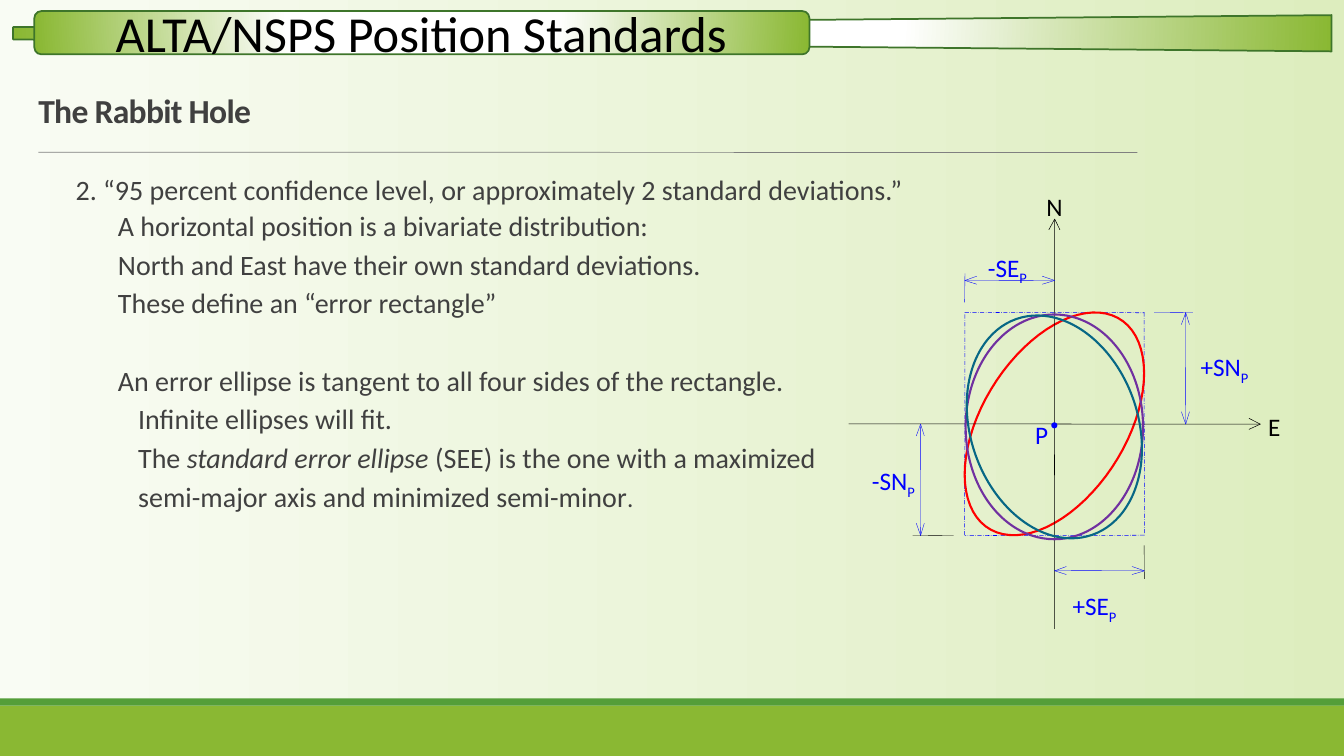
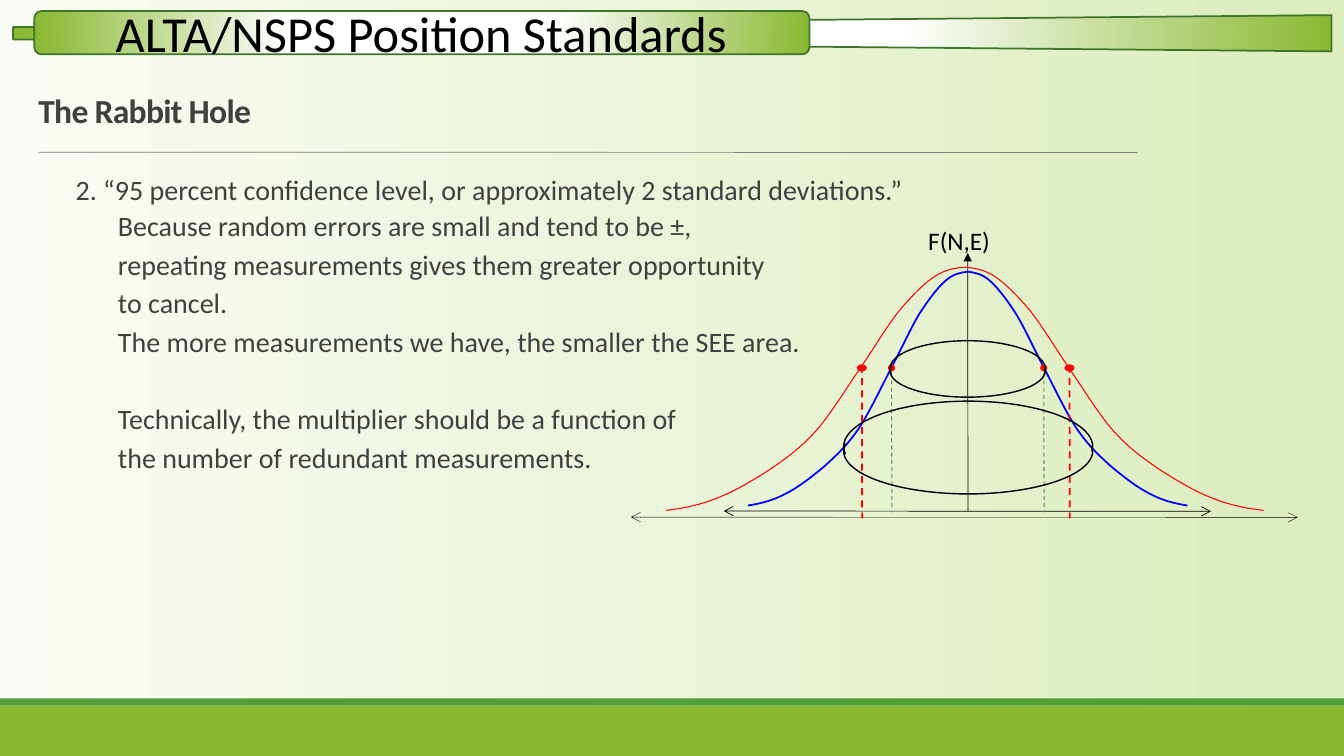
from dataclasses import dataclass
from math import cos, pi, radians

from pptx import Presentation
from pptx.dml.color import RGBColor
from pptx.enum.dml import MSO_LINE
from pptx.enum.shapes import MSO_CONNECTOR, MSO_SHAPE
from pptx.enum.text import MSO_ANCHOR, MSO_AUTO_SIZE, PP_ALIGN
from pptx.oxml import parse_xml
from pptx.oxml.ns import nsdecls, qn
from pptx.oxml.xmlchemy import OxmlElement
from pptx.util import Inches, Pt


@dataclass(frozen=True)
class Theme:
    font: str = "Calibri"
    ink: str = "000000"
    gray: str = "404040"
    rule: str = "808080"
    lime: str = "8AB833"
    green: str = "549E39"
    edge: str = "3E752A"
    pale: str = "F9FCF4"
    tint: str = "DDEDBE"
    blue: str = "0000FF"
    red: str = "FF0000"
    plum: str = "7030A0"
    teal: str = "076785"
    banner: int = 36
    head: int = 24
    body: int = 20
    label: int = 18


T = Theme()

# Grid: columns and rows are both a tenth of an inch
WIDE, HIGH = 133.33, 75
LEAN = 0.03  # keeps thin upright lines from being drawn as hairlines
LEAD = "2. “95 percent confidence level, or approximately 2 standard deviations.”"
INDENT = (0, 4.2, 6.2)
GAP = 29.6  # points above the first line of a new group

# Half of the bell as Bézier points: columns and rows from its top
BELL = [(21.8, 23.2),
        (20.5, 23), (19.3, 22.7), (18, 22), (16.8, 21.4), (15.4, 20.3), (14.2, 19.3),
        (13, 18.2), (12.1, 17.4), (10.9, 15.7), (9.8, 14.1), (8.5, 11.3), (7.5, 9.4),
        (6.5, 7.5), (5.7, 5.7), (4.8, 4.2), (3.9, 2.8), (3, 1.6), (2.2, 0.9),
        (1.4, 0.2), (0.7, 0.1), (0, 0)]


def cell(count):
    return Inches(count / 10)


def place(shape, box):
    shape.left, shape.top, shape.width, shape.height = map(cell, box)


def paint(shape, fill=None, line=None, width=1.0):
    shape.shadow.inherit = False
    if fill:
        shape.fill.solid()
        shape.fill.fore_color.rgb = RGBColor.from_string(fill)
    else:
        shape.fill.background()
    if line:
        shape.line.color.rgb = RGBColor.from_string(line)
        shape.line.width = Pt(width)
    else:
        shape.line.fill.background()


def block(slide, kind, box, **style):
    shape = slide.shapes.add_shape(kind, *map(cell, box))
    paint(shape, **style)
    return shape


def glow(shape):
    """Fill a shape with white that fades to lime at its ends."""
    stops = "".join(
        f'<a:gs pos="{pos}"><a:srgbClr val="{tone}"/></a:gs>'
        for pos, tone in ((0, "FFFFFF"), (35000, "FFFFFF"), (100000, T.lime)))
    fill = parse_xml(
        f'<a:gradFill {nsdecls("a")} rotWithShape="1"><a:gsLst>{stops}</a:gsLst>'
        '<a:path path="circle"><a:fillToRect l="50000" t="-80000" r="50000" '
        'b="180000"/></a:path></a:gradFill>')
    props = shape.element.spPr
    props.replace(props.find(qn("a:noFill")), fill)


def rule(slide, start, end, color, width, dash=None, head=None, tail=None):
    line = slide.shapes.add_connector(
        MSO_CONNECTOR.STRAIGHT, *map(cell, start), *(cell(n + LEAN) for n in end))
    line.line.color.rgb = RGBColor.from_string(color)
    line.line.width = Pt(width)
    line.line.dash_style = dash
    for tag, kind in (("a:headEnd", head), ("a:tailEnd", tail)):
        if kind:
            tip = OxmlElement(tag)
            tip.set("type", kind)
            line.line._get_or_add_ln().append(tip)
    line.element.spPr.append(OxmlElement("a:effectLst"))


def barb(slide, tip, back, half, color, width):
    """Two strokes from a tip; back is the way they run."""
    x, y = tip
    for side in (-half, half):
        wing = (x + back[0] + (side if back[1] else 0),
                y + back[1] + (side if back[0] else 0))
        rule(slide, wing, tip, color, width)


def trace(slide, points, color, width, close=False):
    spots = [(cell(x), cell(y)) for x, y in points]
    pen = slide.shapes.build_freeform(*spots[0])
    pen.add_line_segments(spots[1:], close=close)
    shape = pen.convert_to_shape()
    paint(shape, line=color, width=width)
    return shape


def bend(shape):
    """Turn each three straight steps of an outline into one Bézier."""
    steps = list(shape.element.iter(qn("a:lnTo")))
    for trio in zip(steps[::3], steps[1::3], steps[2::3]):
        curve = OxmlElement("a:cubicBezTo")
        trio[0].addprevious(curve)
        for step in trio:
            curve.append(step[0])
            step.getparent().remove(step)


def write(para, text, size, color, bold=None, slant=None):
    run = para.add_run()
    run.text = text
    font = run.font
    font.name, font.size, font.bold, font.italic = T.font, Pt(size), bold, slant
    font.color.rgb = RGBColor.from_string(color)
    return run


def label(slide, text, box, color=T.ink, sub=None, inset=0):
    frame = slide.shapes.add_textbox(*map(cell, box)).text_frame
    frame.word_wrap = False
    frame.auto_size = MSO_AUTO_SIZE.SHAPE_TO_FIT_TEXT
    frame.margin_left = frame.margin_right = cell(inset)
    frame.margin_top = frame.margin_bottom = cell(inset / 2)
    para = frame.paragraphs[0]
    write(para, text, T.label, color)
    if sub:
        low = write(para, sub, T.label, color)
        low._r.get_or_add_rPr().set("baseline", "-25000")


def dot(slide, x, y, wide, high, color):
    box = (x - wide / 2, y - high / 2, wide, high)
    block(slide, MSO_SHAPE.OVAL, box, fill=color)


# Parts that all slides share
def dress(layout, slide):
    """Draw the frame on a slide, then move it to the layout."""
    fill = layout.background.fill
    fill.gradient()
    fill.gradient_angle = 0
    for stop, tone in zip(fill.gradient_stops, (T.pale, T.tint)):
        stop.color.rgb = RGBColor.from_string(tone)
    old = len(slide.shapes)

    wedge = block(slide, MSO_SHAPE.TRAPEZOID, (64.9, -62.1, 3.6, 130.8),
                  line=T.edge, width=1.25)
    wedge.adjustments[0] = 0.33
    wedge.rotation = 270
    glow(wedge)
    block(slide, MSO_SHAPE.RECTANGLE, (0, 70, WIDE, 5), fill=T.lime)
    block(slide, MSO_SHAPE.RECTANGLE, (0, 69.3, WIDE, 0.7), fill=T.green)
    rule(slide, (3.8, 15.1), (112.8, 15.1), T.rule, 0.5)
    glow(block(slide, MSO_SHAPE.ROUNDED_RECTANGLE, (3.4, 1.1, 76.9, 4.3),
               line=T.edge, width=1.25))
    frame = slide.shapes.add_textbox(*map(cell, (4.1, -0.3, 75.4, 7.1))).text_frame
    frame.word_wrap = True
    para = frame.paragraphs[0]
    para.alignment = PP_ALIGN.CENTER
    write(para, "ALTA/NSPS Position Standards", T.banner, T.ink)

    for shape in list(slide.shapes)[old:]:
        layout.shapes.element.append(shape.element)
    place(layout.placeholders[0], (2.8, 7.75, 110, 5.65))
    place(layout.placeholders[1], (7.5, 17, 118, 47.5))


def head(slide):
    frame = slide.shapes.title.text_frame
    frame.auto_size = MSO_AUTO_SIZE.NONE
    frame.vertical_anchor = MSO_ANCHOR.BOTTOM
    para = frame.paragraphs[0]
    para.alignment = PP_ALIGN.LEFT
    para.line_spacing = 0.85
    run = write(para, "The Rabbit Hole", T.head, T.gray, bold=True)
    run._r.get_or_add_rPr().set("spc", "-50")


def body(slide, items):
    """Each item is level, space before, then (text, size, slant) runs."""
    frame = slide.placeholders[1].text_frame
    frame.auto_size = MSO_AUTO_SIZE.NONE
    frame.margin_left = frame.margin_right = 0
    rows = [(0, 12, (LEAD, T.body, None)), *items]
    for spot, (level, above, *runs) in enumerate(rows):
        para = frame.add_paragraph() if spot else frame.paragraphs[0]
        para.level = level
        para.line_spacing = 0.9
        para.space_before = Pt(above)
        para.space_after = Pt(4 if level else 2)
        props = para._p.get_or_add_pPr()
        props.set("marL", str(cell(INDENT[level])))
        props.set("indent", "0")
        props.append(OxmlElement("a:buNone"))
        for text, size, slant in runs:
            write(para, text, size, T.gray, slant=slant)


def item(text, level=1, above=2):
    return (level, above, (text, T.body, None))


# Error rectangle with the ellipses that fit it
def errors(slide):
    x, y, east, north = 104.6, 42.05, 8.9, 11.05
    left, right, top, base = x - east, x + east, y - north, y + north
    ring = [(left, top), (right, top), (right, base), (left, base)]
    for start, end in zip(ring, ring[1:] + ring[:1]):
        rule(slide, start, end, T.blue, 0.38, MSO_LINE.LONG_DASH_DOT)
    turns = [step * pi / 36 for step in range(72)]
    trace(slide, [(x + east * cos(t), y + north * cos(t + radians(117)))
                  for t in turns], T.red, 1.5, close=True)

    # Axes
    for start, end, back in (((x, 62.4), (x, 21.7), (0, 1.1)),
                             ((84.2, y), (125, y), (-1.1, 0))):
        rule(slide, start, end, T.ink, 0.38)
        barb(slide, end, back, 0.55, T.ink, 0.38)
    label(slide, "N", (103.8, 19, 2, 3.7))
    label(slide, "E", (125.8, 40.8, 1.5, 3.7))

    # Sizes with their end marks
    for start, end, back in (((117.6, top), (117.6, y), (0, 1.2)),
                             ((left, 27.8), (x, 27.8), (1.2, 0)),
                             ((x, 56.6), (right, 56.6), (1.2, 0)),
                             ((91.3, y), (91.3, base), (0, 1.2))):
        rule(slide, start, end, T.blue, 0.25)
        barb(slide, start, back, 0.4, T.blue, 0.25)
        barb(slide, end, (-back[0], -back[1]), 0.4, T.blue, 0.25)
    for start, end, color in (((114.5, top), (118.3, top), T.blue),
                              ((left, 30), (left, 27.1), T.blue),
                              ((right, 54.1), (right, 57.4), T.ink),
                              ((94.6, base), (90.5, base), T.ink)):
        rule(slide, start, end, color, 0.25)
    for text, box in (("+SN", (119.1, 34.9, 5.9, 3.7)),
                      ("-SE", (98, 25, 4.8, 3.7)),
                      ("+SE", (106.4, 58.6, 5.4, 3.7)),
                      ("-SN", (86.5, 46.2, 5.3, 3.7))):
        label(slide, text, box, T.blue, sub="P")

    # Centre point and the other ellipses
    dot(slide, x, 42.2, 0.6, 0.6, T.blue)
    label(slide, "P", (102.7, 41.6, 1.6, 3.7), T.blue)
    for box, color, turn in (((95.8, 31.2, 17.6, 22.3), T.plum, 0),
                             ((96.3, 31, 16.6, 22.7), T.teal, 340.6)):
        oval = block(slide, MSO_SHAPE.OVAL, box, line=color, width=1.5)
        oval.rotation = turn


# Bell curves over the axes
def bell(slide, x, y, wide, high, color, width):
    for side in (-wide, wide):
        half = [(x + a * side, y + b * high) for a, b in BELL]
        bend(trace(slide, half, color, width))


def bells(slide):
    x = 96
    rule(slide, (71.8, 50.7), (120.1, 50.7), T.ink, 0.5, head="arrow", tail="arrow")
    rule(slide, (x, 25.1), (x, 50.7), T.ink, 0.5, head="triangle")
    label(slide, "F(N,E)", (91.1, 21.9, 8.2, 4), inset=1)
    rule(slide, (62.6, 51.3), (128.7, 51.3), T.ink, 0.25, head="arrow", tail="arrow")
    bell(slide, x, 26.95, 1, 1, T.blue, 1.25)
    bell(slide, 95.7, 26.5, 1.36, 1.04, T.red, 0.75)

    # Drops from the curves, with a dot on each
    for mid, reach, foot, color, width, size in (
            (x, 7.55, 50.8, T.green, 0.75, 0.7),
            (95.8, 10.3, 51.4, T.red, 1.25, 1)):
        for spot in (mid - reach, mid + reach):
            rule(slide, (spot, 36.3), (spot, foot), color, width, MSO_LINE.DASH)
            dot(slide, spot, 36.5, size, 0.7, T.red)

    # Rings, each a lower half and a flipped upper half
    for left, wide, halves in ((88.3, 15.4, ((34.2, 5.2), (33.8, 5.5))),
                               (83.7, 24.7, ((40.5, 8.5), (39.8, 9)))):
        for flip, (top, high) in enumerate(halves):
            arc = block(slide, MSO_SHAPE.ARC, (left, top, wide, high), line=T.ink)
            arc.adjustments[0], arc.adjustments[1] = 214.63, 110.08
            if flip:
                arc.element.spPr.xfrm.set("flipV", "1")


def main():
    deck = Presentation()
    deck.slide_width, deck.slide_height = cell(WIDE), cell(HIGH)
    layout = deck.slide_layouts[1]
    first, second = (deck.slides.add_slide(layout) for _ in range(2))
    dress(layout, first)

    head(first)
    body(first, [
        item("A horizontal position is a bivariate distribution:"),
        item("North and East have their own standard deviations."),
        item("These define an “error rectangle”"),
        item("An error ellipse is tangent to all four sides of the rectangle.", above=GAP),
        item("Infinite ellipses will fit.", 2),
        (2, 2, ("The ", T.body, None), ("standard error ellipse", T.body, True),
         (" (SEE) is the one with a maximized", T.body, None)),
        (2, 2, ("semi-major axis and minimized semi-minor", T.body, None),
         (".", T.label, None))])
    errors(first)

    head(second)
    body(second, [
        item("Because random errors are small and tend to be ±,"),
        item("repeating measurements gives them greater opportunity"),
        item("to cancel."),
        item("The more measurements we have, the smaller the SEE area."),
        item("Technically, the multiplier should be a function of", above=GAP),
        item("the number of redundant measurements.")])
    bells(second)
    deck.save("out.pptx")


if __name__ == "__main__":
    main()
